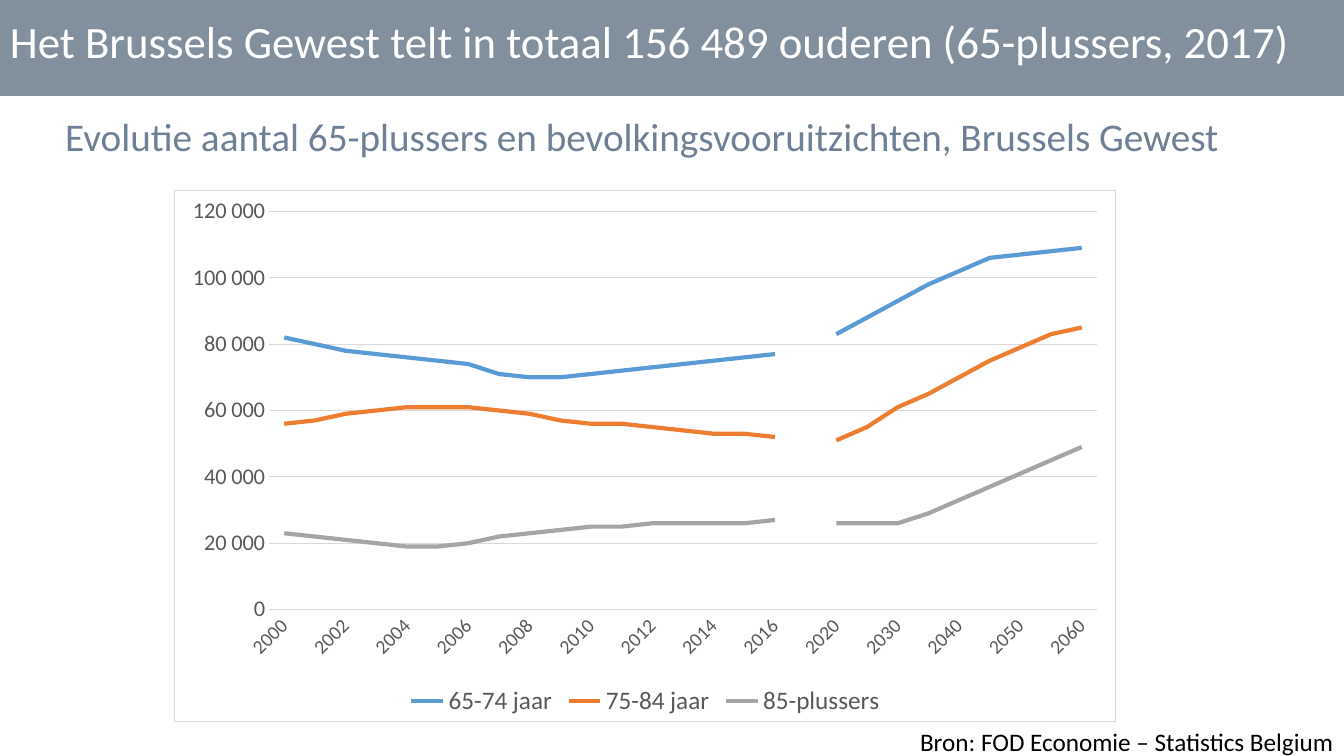
import pptx
import pptx.chart.data
import pptx.dml.color
import pptx.enum.chart
import pptx.enum.shapes
import pptx.enum.text
import pptx.oxml
import pptx.oxml.ns
import pptx.util

Pt = pptx.util.Pt
qn = pptx.oxml.ns.qn
NS = pptx.oxml.ns.nsdecls("c", "a")

BAND, WHITE, BLACK = "82909D", "FFFFFF", "000000"
SUBTITLE, LABEL, RULE = "6E7F96", "595959", "D9D9D9"

YEARS = [str(y) for y in range(2000, 2017)] + [""] + [str(y) for y in range(2020, 2061, 5)]

# Thousands of people: observed 2000-2016, then projected 2020-2060
AGE_GROUPS = [
    ("65-74 jaar", "5B9BD5",
     [82, 80, 78, 77, 76, 75, 74, 71, 70, 70, 71, 72, 73, 74, 75, 76, 77],
     [83, 88, 93, 98, 102, 106, 107, 108, 109]),
    ("75-84 jaar", "ED7D31",
     [56, 57, 59, 60, 61, 61, 61, 60, 59, 57, 56, 56, 55, 54, 53, 53, 52],
     [51, 55, 61, 65, 70, 75, 79, 83, 85]),
    ("85-plussers", "A5A5A5",
     [23, 22, 21, 20, 19, 19, 20, 22, 23, 24, 25, 25, 26, 26, 26, 26, 27],
     [26, 26, 26, 29, 33, 37, 41, 45, 49]),
]


def rgb(color):
    return pptx.dml.color.RGBColor.from_string(color)


class SlideBuilder:
    font = "Calibri"

    def __init__(self, slide):
        self.shapes = slide.shapes

    def style(self, font, size, color):
        font.name = self.font
        font.size = Pt(size)
        font.color.rgb = rgb(color)

    def rule(self, line, color, width):
        line.color.rgb = rgb(color)
        line.width = Pt(width)

    def band(self, x, y, w, h, color):
        sp = self.shapes.add_shape(pptx.enum.shapes.MSO_SHAPE.RECTANGLE,
                                   Pt(x), Pt(y), Pt(w), Pt(h))
        sp.shadow.inherit = False
        sp.fill.solid()
        sp.fill.fore_color.rgb = rgb(color)
        sp.line.fill.background()

    def text(self, x, y, w, h, text, size, color, align="LEFT"):
        tf = self.shapes.add_textbox(Pt(x), Pt(y), Pt(w), Pt(h)).text_frame
        tf.word_wrap = True
        tf.text = text
        p = tf.paragraphs[0]
        p.alignment = pptx.enum.text.PP_ALIGN[align]
        self.style(p.runs[0].font, size, color)

    def line_chart(self, x, y, w, h, categories, groups):
        data = pptx.chart.data.CategoryChartData(number_format=r"#\ ##0")
        data.categories = categories
        for name, _, observed, projected in groups:
            values = [v * 1000 for v in observed] + [None] + [v * 1000 for v in projected]
            data.add_series(name, values)
        chart = self.shapes.add_chart(pptx.enum.chart.XL_CHART_TYPE.LINE,
                                      Pt(x), Pt(y), Pt(w), Pt(h), data).chart
        chart.has_title = False
        self.style(chart.font, 10, BLACK)

        plot = chart.plots[0]
        plot.vary_by_categories = False
        for series, group in zip(plot.series, groups):
            series.smooth = False
            self.rule(series.format.line, group[1], 3)

        chart.has_legend = True
        chart.legend.position = pptx.enum.chart.XL_LEGEND_POSITION.BOTTOM
        chart.legend.include_in_layout = False
        self.style(chart.legend.font, 18, LABEL)
        self.axes(chart)
        self.chart_frame(chart)

    def axes(self, chart):
        years, people = chart.category_axis, chart.value_axis
        for axis, size in ((years, 14), (people, 16)):
            axis.major_tick_mark = pptx.enum.chart.XL_TICK_MARK.NONE
            axis.minor_tick_mark = pptx.enum.chart.XL_TICK_MARK.NONE
            self.style(axis.tick_labels.font, size, LABEL)
        self.rule(years.format.line, RULE, 0.75)
        people.format.line.fill.background()
        people.has_major_gridlines = True
        self.rule(people.major_gridlines.format.line, RULE, 0.75)
        people.minimum_scale, people.maximum_scale, people.major_unit = 0, 120000, 20000
        people.tick_labels.number_format = r"#\ ##0"
        people.tick_labels.number_format_is_linked = False

        # Slanted labels, one for every second category
        cat_ax = chart.plots[0]._element.getparent().find(qn("c:catAx"))
        cat_ax.find(qn("c:txPr")).find(qn("a:bodyPr")).set("rot", "-2700000")
        skip = pptx.oxml.parse_xml(f'<c:tickLblSkip {NS} val="2"/>')
        cat_ax.find(qn("c:noMultiLvlLbl")).addprevious(skip)

    def chart_frame(self, chart):
        """Fix the plot area and give the chart a white ground and thin border."""
        plot_area = chart.plots[0]._element.getparent()
        layout = plot_area.find(qn("c:layout"))
        if layout is not None:
            plot_area.remove(layout)
        sizes = "".join(f'<c:{key} val="{val}"/>' for key, val in
                        (("x", 0.1), ("y", 0.04), ("w", 0.88), ("h", 0.75)))
        plot_area.insert(0, pptx.oxml.parse_xml(
            f'<c:layout {NS}><c:manualLayout><c:layoutTarget val="inner"/>'
            f'<c:xMode val="edge"/><c:yMode val="edge"/>{sizes}'
            '</c:manualLayout></c:layout>'))
        plot_area.getparent().addnext(pptx.oxml.parse_xml(
            f'<c:spPr {NS}><a:solidFill><a:srgbClr val="{WHITE}"/></a:solidFill>'
            f'<a:ln w="{Pt(0.75)}"><a:solidFill><a:srgbClr val="{RULE}"/></a:solidFill>'
            '</a:ln></c:spPr>'))


def main():
    prs = pptx.Presentation()
    prs.slide_width, prs.slide_height = Pt(960), Pt(540)
    s = SlideBuilder(prs.slides.add_slide(prs.slide_layouts[6]))
    s.band(0, 0, 960, 68.5, BAND)
    s.text(0, 6.5, 960, 46, "Het Brussels Gewest telt in totaal 156 489 ouderen "
           "(65-plussers, 2017)", 32, WHITE)
    s.text(540.5, 515.5, 419, 29, "Bron: FOD Economie – Statistics Belgium",
           18, BLACK, "RIGHT")
    s.line_chart(124.5, 135.5, 673, 380, YEARS, AGE_GROUPS)
    s.text(39.5, 77, 872, 41, "Evolutie aantal 65-plussers en "
           "bevolkingsvooruitzichten, Brussels Gewest", 28, SUBTITLE)
    prs.save("out.pptx")


if __name__ == "__main__":
    main()
